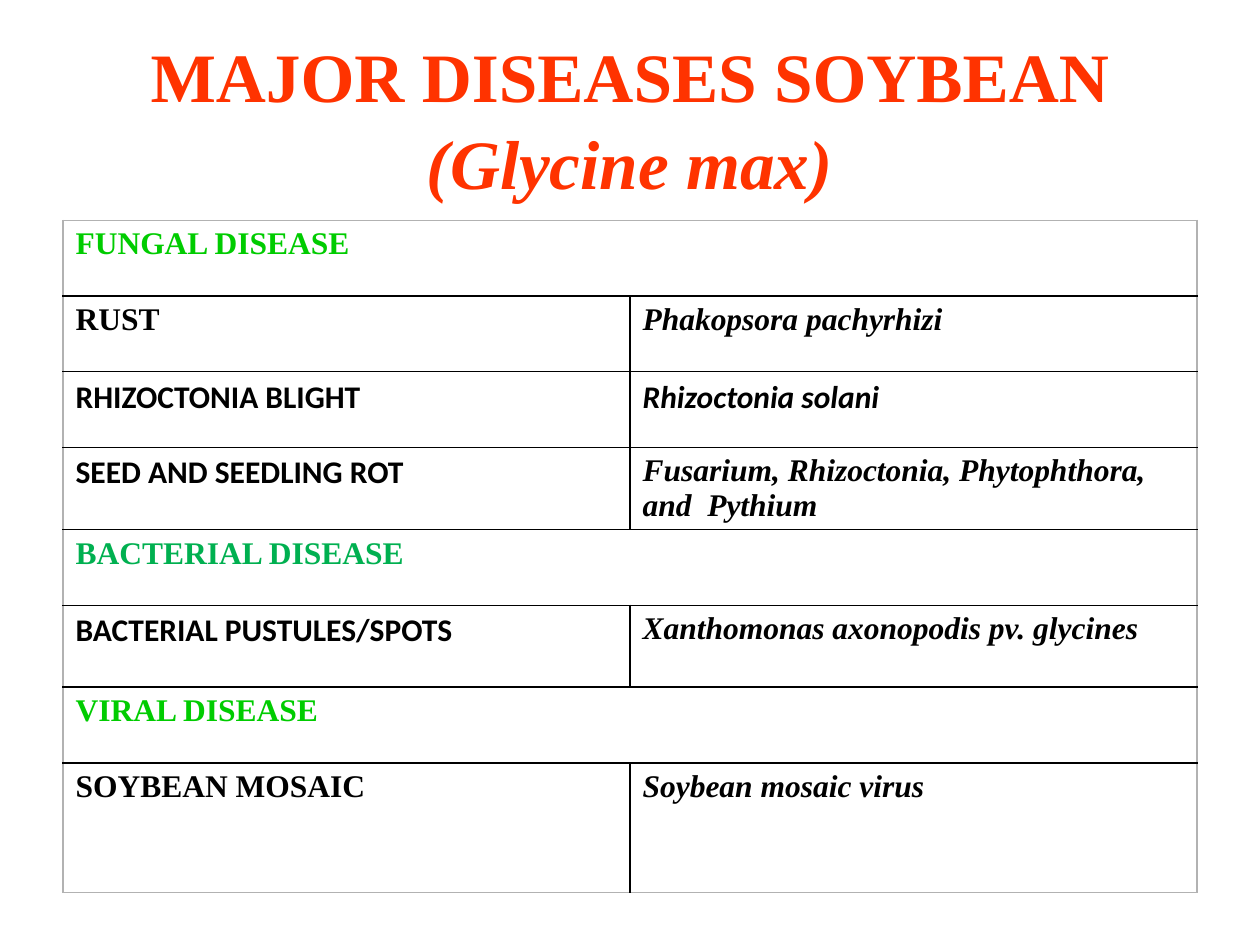
from dataclasses import dataclass

from lxml.etree import SubElement
from pptx import Presentation
from pptx.dml.color import RGBColor
from pptx.enum.text import MSO_ANCHOR, MSO_AUTO_SIZE, PP_ALIGN
from pptx.oxml.ns import qn
from pptx.util import Pt


@dataclass(frozen=True)
class Theme:
    """Colours, fonts and type sizes of the slide."""
    title_color: str = "FF3300"
    text: str = "000000"
    group: str = "00CC00"
    bacterial: str = "00B050"
    inner_line: str = "000000"
    outer_line: str = "B2B2B2"
    serif: str = "Times New Roman"
    sans: str = "Calibri"
    title_size: float = 39.6
    table_size: float = 18


THEME = Theme()
COLUMN_WIDTH = 324
SERIF, SANS = THEME.serif, THEME.sans
DISEASES = [
    (43.2, [("FUNGAL DISEASE", SERIF, THEME.group)]),
    (43.2, [("RUST", SERIF), ("Phakopsora pachyrhizi", SERIF)]),
    (43.2, [("RHIZOCTONIA BLIGHT", SANS), ("Rhizoctonia solani", SANS)]),
    (46.8, [("SEED AND SEEDLING ROT", SANS),
            ("Fusarium, Rhizoctonia, Phytophthora, and  Pythium", SERIF)]),
    (43.2, [("BACTERIAL DISEASE", SERIF, THEME.bacterial)]),
    (46.8, [("BACTERIAL PUSTULES/SPOTS", SANS),
            ("Xanthomonas axonopodis pv. glycines", SERIF)]),
    (43.2, [("VIRAL DISEASE", SERIF, THEME.group)]),
    (74.2, [("SOYBEAN MOSAIC", SERIF), ("Soybean mosaic virus", SERIF)]),
]


class SlideBuilder:
    """Holds the theme and the current slide."""

    def __init__(self, page, theme):
        """Keep the slide and its style."""
        self.page = page
        self.theme = theme

    def style(self, span, name, size, color, italic=False):
        """Format one bold run."""
        font = span.font
        font.name, font.size = name, Pt(size)
        font.bold, font.italic = True, italic
        font.color.rgb = RGBColor.from_string(color)

    def title(self, name, species):
        """Fill the title placeholder with a name and an italic species."""
        box = self.page.shapes.title
        box.left, box.top, box.width, box.height = Pt(36), Pt(21.6), Pt(648), Pt(90)
        frame = box.text_frame
        frame.auto_size = MSO_AUTO_SIZE.NONE
        frame.vertical_anchor = MSO_ANCHOR.MIDDLE
        para = frame.paragraphs[0]
        para.alignment = PP_ALIGN.CENTER
        para.line_spacing = 1.04
        for text, italic in ((name, False), (species, True)):
            span = para.add_run()
            span.text = text
            self.style(span, self.theme.serif, self.theme.title_size,
                       self.theme.title_color, italic)

    def borders(self, cell, outer_sides):
        """Draw the four cell borders, with the outer ones in grey."""
        properties = cell._tc.get_or_add_tcPr()
        for index, side in enumerate("LRTB"):
            line = SubElement(properties, qn(f"a:ln{side}"), w=str(Pt(1)))
            fill = SubElement(line, qn("a:solidFill"))
            color = self.theme.outer_line if side in outer_sides else self.theme.inner_line
            SubElement(fill, qn("a:srgbClr"), val=color)
            properties.insert(index, line)

    def table(self, rows):
        """Add the table, where a row with one entry spans both columns."""
        height = sum(row_height for row_height, _ in rows)
        table = self.page.shapes.add_table(
            len(rows), 2, Pt(36), Pt(126), Pt(2 * COLUMN_WIDTH), Pt(height)).table
        table.first_row = table.horz_banding = False
        for column in table.columns:
            column.width = Pt(COLUMN_WIDTH)
        for row, (row_height, entries) in enumerate(rows):
            table.rows[row].height = Pt(row_height)
            spanning = len(entries) == 1
            if spanning:
                table.cell(row, 0).merge(table.cell(row, 1))
            for column in range(2):
                cell = table.cell(row, column)
                cell.fill.background()
                outer = "LR" if spanning else "LR"[column]
                outer += "T" if row == 0 else ""
                outer += "B" if row == len(rows) - 1 else ""
                self.borders(cell, outer)
            for column, (text, name, *color) in enumerate(entries):
                cell = table.cell(row, column)
                cell.text_frame.text = text
                self.style(cell.text_frame.paragraphs[0].runs[0], name,
                           self.theme.table_size,
                           color[0] if color else self.theme.text, column == 1)


def main():
    """Build and save the slide."""
    deck = Presentation()
    deck.slide_width, deck.slide_height = Pt(720), Pt(540)
    page = deck.slides.add_slide(deck.slide_layouts[5])
    builder = SlideBuilder(page, THEME)
    builder.title("MAJOR DISEASES SOYBEAN ", "(Glycine max)")
    builder.table(DISEASES)
    deck.save("out.pptx")


if __name__ == "__main__":
    main()
